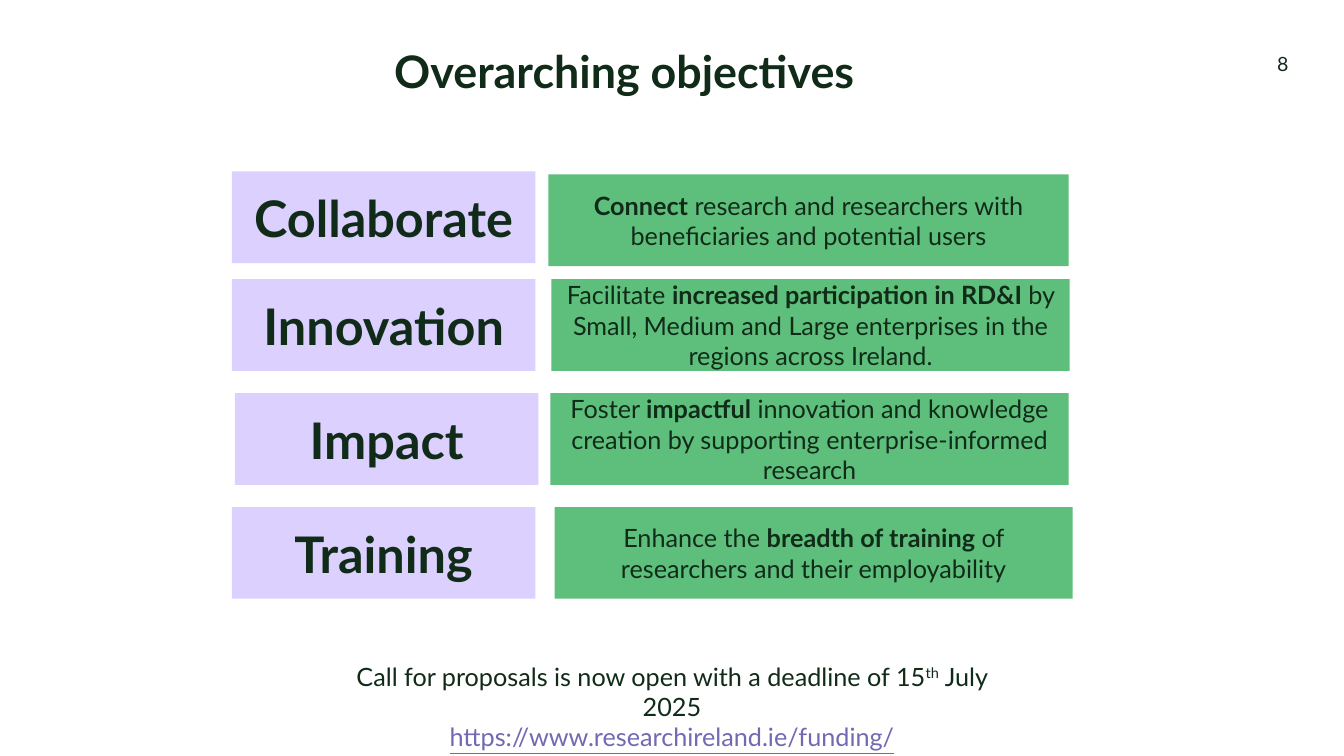
"""Build the slide that lists the overarching objectives of a research call."""
import pptx
import pptx.util
import pptx.dml.color
import pptx.enum.shapes
import pptx.enum.text

Inches = pptx.util.Inches
ALIGN = pptx.enum.text.PP_ALIGN
ANCHOR = pptx.enum.text.MSO_ANCHOR

COLORS = {"ink": "112B19", "green": "5EBF7C", "lilac": "DCD0FF", "link": "7169B2"}
FONT = "Lato"

TITLE = "Overarching objectives"
PAGE_NUMBER = "8"
BOLD = {"bold": True}
OBJECTIVES = [
    {"name": "Collaborate", "name_at": (2.3, 1.7), "goal_at": (5.44, 1.73), "goal_width": 5.16,
     "goal": [("Connect", BOLD),
              " research and researchers with beneficiaries and potential users"]},
    {"name": "Innovation", "name_at": (2.3, 2.77), "goal_at": (5.47, 2.77), "goal_width": 5.14,
     "goal": ["Facilitate ", ("increased participation in RD&I ", BOLD),
              "by Small, Medium and Large enterprises in the regions across Ireland."]},
    {"name": "Impact", "name_at": (2.33, 3.9), "goal_at": (5.46, 3.9), "goal_width": 5.14,
     "goal": ["Foster ", ("impactful", BOLD),
              " innovation and knowledge creation by supporting enterprise-informed research"]},
    {"name": "Training", "name_at": (2.3, 5.03), "goal_at": (5.5, 5.03), "goal_width": 5.14,
     "goal": ["Enhance the ", ("breadth of training", BOLD),
              " of researchers and their employability"]},
]
CALL = [
    ["Call for proposals is now open with a deadline of 15", ("th", {"baseline": 30000}),
     " July 2025"],
    [("https://www.researchireland.ie/funding/", {"color": "link", "underline": True})],
]
NAME_WIDTH, BOX_HEIGHT = 3.01, 0.91


def rgb(name):
    """Return the named colour."""
    return pptx.dml.color.RGBColor.from_string(COLORS[name])


def write(tf, paragraphs, size=18, bold=False, align=ALIGN.CENTER, anchor=ANCHOR.TOP,
          line_spacing=None, inset=None):
    """Fill a text frame with paragraphs made of plain or formatted runs."""
    tf.word_wrap = True
    tf.auto_size = pptx.enum.text.MSO_AUTO_SIZE.NONE
    tf.vertical_anchor = anchor
    if inset is not None:
        tf.margin_left = tf.margin_right = tf.margin_top = tf.margin_bottom = Inches(inset)
    for i, runs in enumerate(paragraphs):
        p = tf.paragraphs[0] if i == 0 else tf.add_paragraph()
        p.alignment = align
        p.space_before = pptx.util.Pt(0)
        if line_spacing:
            p.line_spacing = line_spacing
        for run in runs:
            text, style = (run, {}) if isinstance(run, str) else run
            r = p.add_run()
            r.text = text
            r.font.name = FONT
            r.font.size = pptx.util.Pt(size)
            r.font.bold = style.get("bold", bold)
            r.font.underline = style.get("underline", False)
            r.font.color.rgb = rgb(style.get("color", "ink"))
            if "baseline" in style:
                r._r.get_or_add_rPr().set("baseline", str(style["baseline"]))


def add_box(slide, at, width, fill, runs, **style):
    """Add a filled rectangle with centred text."""
    sp = slide.shapes.add_shape(pptx.enum.shapes.MSO_SHAPE.RECTANGLE, Inches(at[0]),
                                Inches(at[1]), Inches(width), Inches(BOX_HEIGHT))
    sp.shadow.inherit = False
    sp.fill.solid()
    sp.fill.fore_color.rgb = rgb(fill)
    sp.line.fill.background()
    write(sp.text_frame, [runs], anchor=ANCHOR.MIDDLE, **style)


def add_text(slide, left, top, width, height, paragraphs, **style):
    """Add a text box."""
    sp = slide.shapes.add_textbox(Inches(left), Inches(top), Inches(width), Inches(height))
    write(sp.text_frame, paragraphs, **style)


def main():
    """Create and save the slide."""
    prs = pptx.Presentation()
    prs.slide_width, prs.slide_height = Inches(13.33), Inches(7.5)
    slide = prs.slides.add_slide(prs.slide_layouts[5])

    title = slide.shapes.title
    title.left, title.top = Inches(3.81), Inches(0.44)
    title.width, title.height = Inches(8), Inches(1.1)
    write(title.text_frame, [[TITLE]], size=32, bold=True, align=ALIGN.LEFT, line_spacing=0.9)
    add_text(slide, 12.18, 0.54, 0.6, 0.69, [[PAGE_NUMBER]], size=14, align=ALIGN.RIGHT,
             line_spacing=0.9, inset=0)

    for objective in OBJECTIVES:
        add_box(slide, objective["name_at"], NAME_WIDTH, "lilac", [objective["name"]],
                size=36, bold=True)
        add_box(slide, objective["goal_at"], objective["goal_width"], "green",
                objective["goal"])

    add_text(slide, 3.18, 6.51, 6.97, 0.71, CALL)
    prs.save("out.pptx")


if __name__ == "__main__":
    main()
